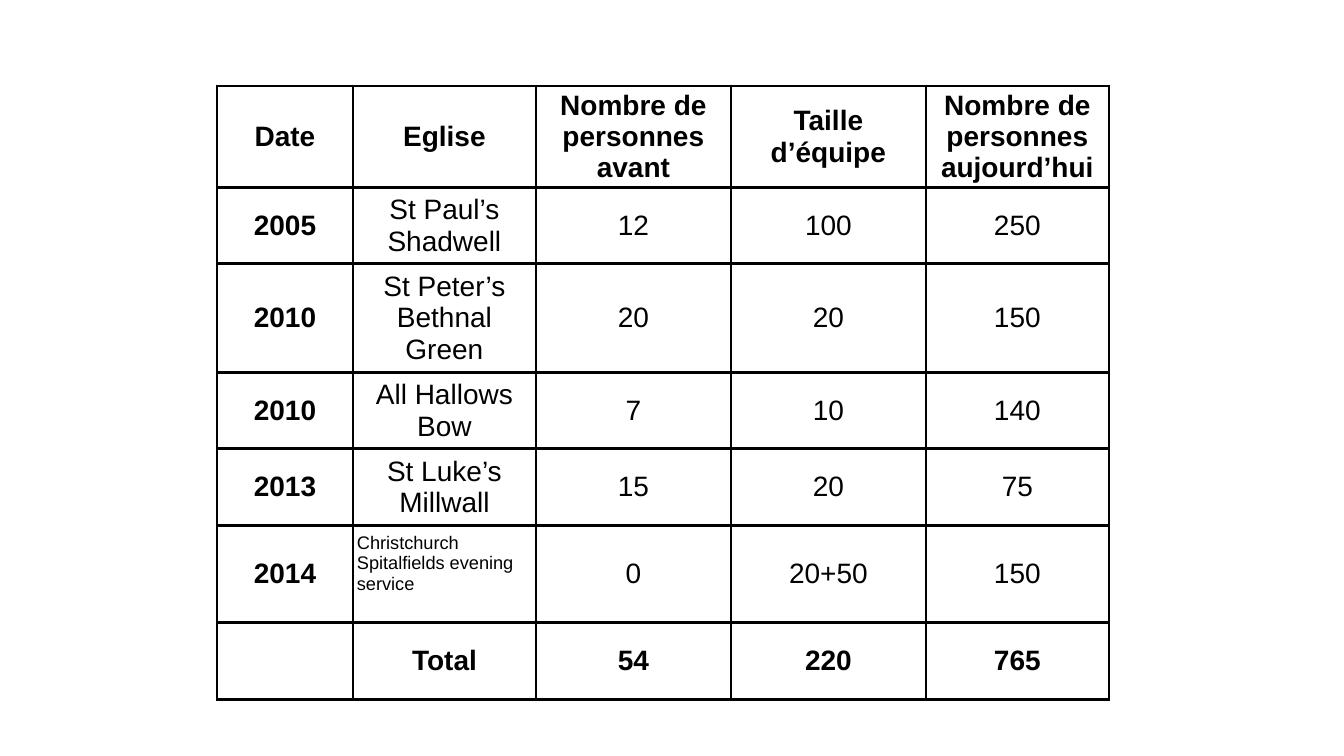
from lxml.etree import SubElement
from pptx import Presentation
from pptx.dml.color import RGBColor
from pptx.enum.text import MSO_ANCHOR as Anchor, PP_ALIGN as Align
from pptx.oxml.ns import qn
from pptx.util import Emu, Pt

PX = 914400 / 100.8
MARGIN = 4
BORDER = "000000"
ROWS = [
    ["Date", "Eglise", "Nombre de personnes avant", "Taille d’équipe",
     "Nombre de personnes aujourd’hui"],
    ["2005", "St Paul’s Shadwell", "12", "100", "250"],
    ["2010", "St Peter’s Bethnal Green", "20", "20", "150"],
    ["2010", "All Hallows Bow", "7", "10", "140"],
    ["2013", "St Luke’s Millwall", "15", "20", "75"],
    ["2014", "Christchurch Spitalfields evening service", "0", "20+50", "150"],
    ["", "Total", "54", "220", "765"],
]
COLUMN_WIDTHS = [136, 183, 195, 195, 183]
ROW_HEIGHTS = [101, 76, 109, 76, 77, 97, 77]
EVENING_SERVICE = (5, 1)


def px(length):
    return Emu(round(length * PX))


def draw_borders(cell):
    properties = cell._tc.get_or_add_tcPr()
    for place, side in enumerate(("a:lnL", "a:lnR", "a:lnT", "a:lnB")):
        line = properties.makeelement(qn(side), {"w": str(Pt(2.25))})
        fill = SubElement(line, qn("a:solidFill"))
        SubElement(fill, qn("a:srgbClr"), val=BORDER)
        properties.insert(place, line)


deck = Presentation()
deck.slide_width, deck.slide_height = px(1344), px(756)
page = deck.slides.add_slide(deck.slide_layouts[6])

frame = page.shapes.add_table(
    len(ROWS), len(COLUMN_WIDTHS), px(217), px(86),
    px(sum(COLUMN_WIDTHS)), px(sum(ROW_HEIGHTS)))
table = frame.table
table.first_row = table.horz_banding = False
for column, width in zip(table.columns, COLUMN_WIDTHS):
    column.width = px(width)
for row, height in zip(table.rows, ROW_HEIGHTS):
    row.height = px(height)

for r, texts in enumerate(ROWS):
    for c, text in enumerate(texts):
        cell = table.cell(r, c)
        small = (r, c) == EVENING_SERVICE
        layout = {
            "vertical_anchor": Anchor.MIDDLE,
            "margin_left": px(MARGIN),
            "margin_right": px(MARGIN),
            "margin_top": px(MARGIN),
            "margin_bottom": px(MARGIN + 21 if small else MARGIN),
        }
        for name, value in layout.items():
            setattr(cell, name, value)
        cell.fill.background()
        draw_borders(cell)
        if not text:
            continue
        para = cell.text_frame.paragraphs[0]
        para.alignment = Align.LEFT if small else Align.CENTER
        span = para.add_run()
        span.text = text
        style = {
            "name": "Arial",
            "size": Pt(13 if small else 20),
            "bold": c == 0 or r in (0, len(ROWS) - 1),
        }
        for name, value in style.items():
            setattr(span.font, name, value)
        span.font.color.rgb = RGBColor.from_string("000000")

deck.save("out.pptx")
